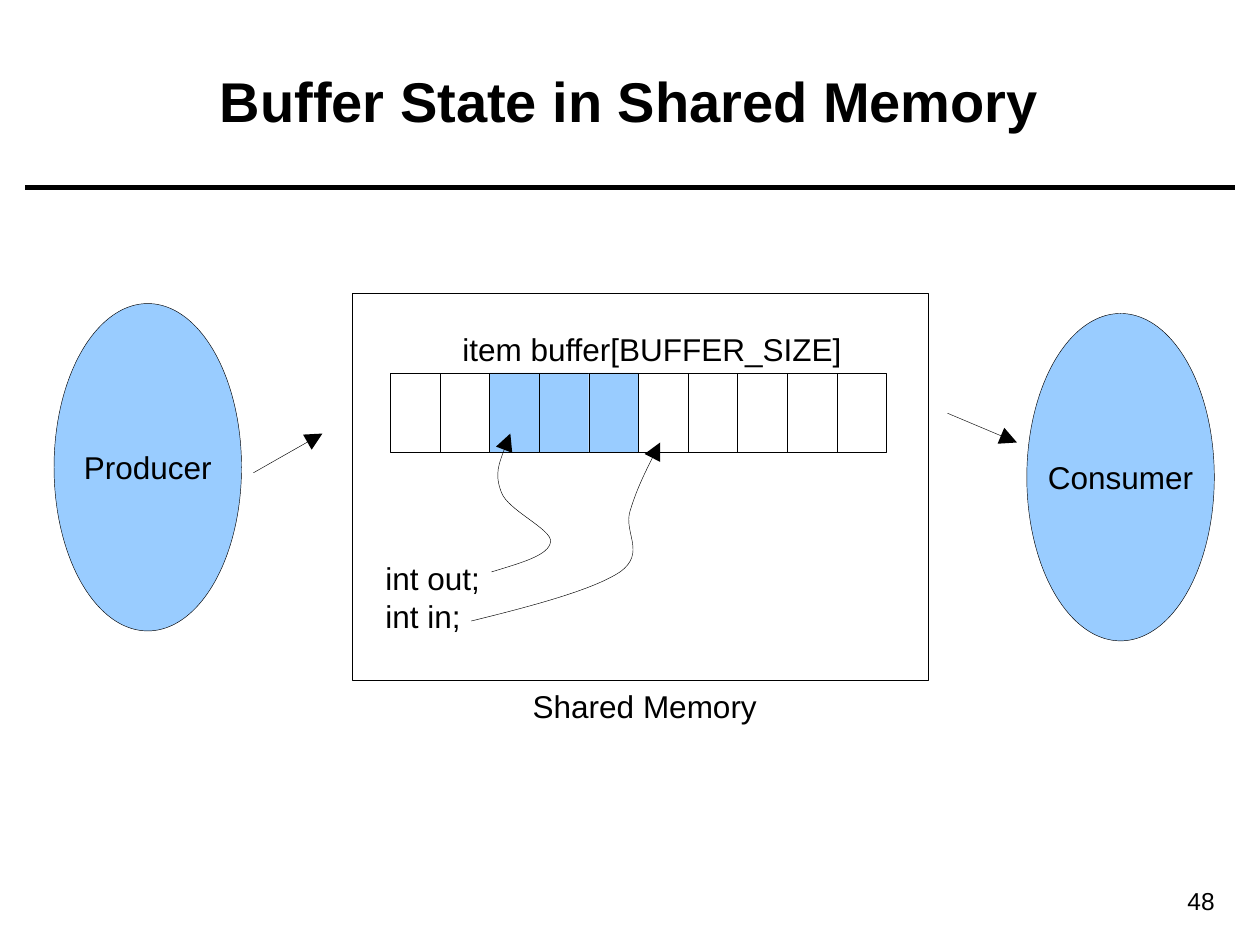
from dataclasses import dataclass
from typing import NamedTuple, Optional

from lxml import etree
from pptx import Presentation
from pptx.dml.color import RGBColor
from pptx.enum import shapes, text
from pptx.oxml import ns
from pptx.util import Cm, Pt


@dataclass(frozen=True)
class Theme:
    font: str = "Arial"
    ink: RGBColor = RGBColor(0x00, 0x00, 0x00)
    accent: RGBColor = RGBColor(0x99, 0xCC, 0xFF)
    title: int = 32
    body: int = 18
    page: int = 14
    hairline: float = 0.25
    rule: float = 3


class Box(NamedTuple):
    left: float
    top: float
    width: float
    height: float

    def lengths(self) -> list:
        return [Cm(side) for side in self]


class Point(NamedTuple):
    x: float
    y: float


@dataclass(frozen=True)
class Label:
    box: Box
    lines: list
    size: int
    align: text.PP_ALIGN = text.PP_ALIGN.LEFT


@dataclass(frozen=True)
class Process:
    name: str
    box: Box


@dataclass(frozen=True)
class Link:
    start: Point
    end: Point
    width: float
    arrow: bool = True


THEME = Theme()
SHARED_MEMORY = Box(7.11, 5.92, 11.61, 7.8)
FIRST_SLOT = Box(7.87, 7.52, 1, 1.6)
SLOT_COUNT = 10
FULL_SLOTS = range(2, 5)

PROCESSES = [
    Process("Producer", Box(1.09, 6.12, 3.78, 6.6)),
    Process("Consumer", Box(20.7, 6.32, 3.78, 6.6)),
]
LINKS = [
    Link(Point(0.51, 3.78), Point(24.89, 3.78), THEME.rule, arrow=False),
    Link(Point(5.11, 9.53), Point(6.5, 8.74), THEME.hairline),
    Link(Point(19.1, 8.33), Point(20.5, 8.92), THEME.hairline),
]
LABELS = [
    Label(Box(9.07, 6.53, 8.15, 1.02), ["item buffer[BUFFER_SIZE]"], THEME.body),
    Label(Box(7.52, 11.15, 2.59, 1.78), ["int out;", "int in;"], THEME.body),
    Label(Box(10.49, 13.72, 5.03, 1.02), ["Shared Memory"], THEME.body),
    Label(Box(22.1, 17.73, 2.64, 0.86), ["48"], THEME.page, text.PP_ALIGN.RIGHT),
]
OUT_POINTER = [
    Point(9.91, 11.53),
    Point(10.49, 11.35), Point(11.07, 11.2), Point(11.1, 10.92),
    Point(11.13, 10.67), Point(10.24, 10.29), Point(10.11, 9.93),
    Point(9.96, 9.55), Point(10.13, 9.14), Point(10.29, 8.74),
]
IN_POINTER = [
    Point(9.5, 12.52),
    Point(10.72, 12.22), Point(11.96, 11.89), Point(12.5, 11.53),
    Point(13.03, 11.15), Point(12.57, 10.74), Point(12.7, 10.31),
    Point(12.83, 9.88), Point(13.06, 9.4), Point(13.31, 8.92),
]


def write(frame, lines: list, size: int, align: text.PP_ALIGN, bold: bool = False) -> None:
    frame.text = "\n".join(lines)
    for paragraph in frame.paragraphs:
        paragraph.alignment = align
        paragraph.font.name = THEME.font
        paragraph.font.size = Pt(size)
        paragraph.font.bold = bold
        paragraph.font.color.rgb = THEME.ink


def stroke(shape, width: float, arrow: bool = False) -> None:
    shape.line.color.rgb = THEME.ink
    shape.line.width = Pt(width)
    if arrow:
        outline = shape.element.spPr.find(ns.qn("a:ln"))
        etree.SubElement(outline, ns.qn("a:tailEnd"), type="triangle", w="lg", len="lg")


def draw_shape(slide, kind: shapes.MSO_SHAPE, box: Box, fill: Optional[RGBColor] = None):
    shape = slide.shapes.add_shape(kind, *box.lengths())
    shape.shadow.inherit = False
    if fill is None:
        shape.fill.background()
    else:
        shape.fill.solid()
        shape.fill.fore_color.rgb = fill
    stroke(shape, THEME.hairline)
    return shape


def draw_buffer(slide) -> None:
    for index in range(SLOT_COUNT):
        slot = FIRST_SLOT._replace(left=FIRST_SLOT.left + index * FIRST_SLOT.width)
        fill = THEME.accent if index in FULL_SLOTS else None
        draw_shape(slide, shapes.MSO_SHAPE.RECTANGLE, slot, fill)


def draw_process(slide, process: Process) -> None:
    ellipse = draw_shape(slide, shapes.MSO_SHAPE.OVAL, process.box, THEME.accent)
    frame = ellipse.text_frame
    frame.word_wrap = False
    frame.vertical_anchor = text.MSO_ANCHOR.MIDDLE
    write(frame, [process.name], THEME.body, text.PP_ALIGN.CENTER)


def draw_label(slide, label: Label) -> None:
    frame = slide.shapes.add_textbox(*label.box.lengths()).text_frame
    frame.word_wrap = False
    frame.auto_size = text.MSO_AUTO_SIZE.SHAPE_TO_FIT_TEXT
    write(frame, label.lines, label.size, label.align)


def draw_link(slide, link: Link) -> None:
    ends = [Cm(value) for value in (*link.start, *link.end)]
    connector = slide.shapes.add_connector(shapes.MSO_CONNECTOR.STRAIGHT, *ends)
    stroke(connector, link.width, link.arrow)
    etree.SubElement(connector.element.spPr, ns.qn("a:effectLst"))


def draw_pointer(slide, points: list) -> None:
    start, *controls = [(Cm(point.x), Cm(point.y)) for point in points]
    builder = slide.shapes.build_freeform(*start)
    builder.add_line_segments(controls, close=False)
    curve = builder.convert_to_shape()
    segments = list(curve.element.iter(ns.qn("a:lnTo")))
    for first in range(0, len(segments), 3):
        bezier = etree.Element(ns.qn("a:cubicBezTo"))
        segments[first].addprevious(bezier)
        for segment in segments[first:first + 3]:
            bezier.append(segment[0])
            segment.getparent().remove(segment)
    curve.shadow.inherit = False
    curve.fill.background()
    stroke(curve, THEME.hairline, arrow=True)


def draw_title(slide) -> None:
    title = slide.shapes.title
    title.left, title.top, title.width, title.height = Box(0.89, 0.43, 23.6, 3.18).lengths()
    title.text_frame.vertical_anchor = text.MSO_ANCHOR.MIDDLE
    write(title.text_frame, ["Buffer State in Shared Memory"], THEME.title,
          text.PP_ALIGN.CENTER, bold=True)


def main() -> None:
    deck = Presentation()
    deck.slide_width, deck.slide_height = Cm(25.4), Cm(19.05)
    slide = deck.slides.add_slide(deck.slide_layouts.get_by_name("Title Only"))
    draw_title(slide)
    draw_shape(slide, shapes.MSO_SHAPE.RECTANGLE, SHARED_MEMORY)
    draw_buffer(slide)
    for label in LABELS:
        draw_label(slide, label)
    for pointer in (OUT_POINTER, IN_POINTER):
        draw_pointer(slide, pointer)
    for process in PROCESSES:
        draw_process(slide, process)
    for link in LINKS:
        draw_link(slide, link)
    deck.save("out.pptx")


if __name__ == "__main__":
    main()
